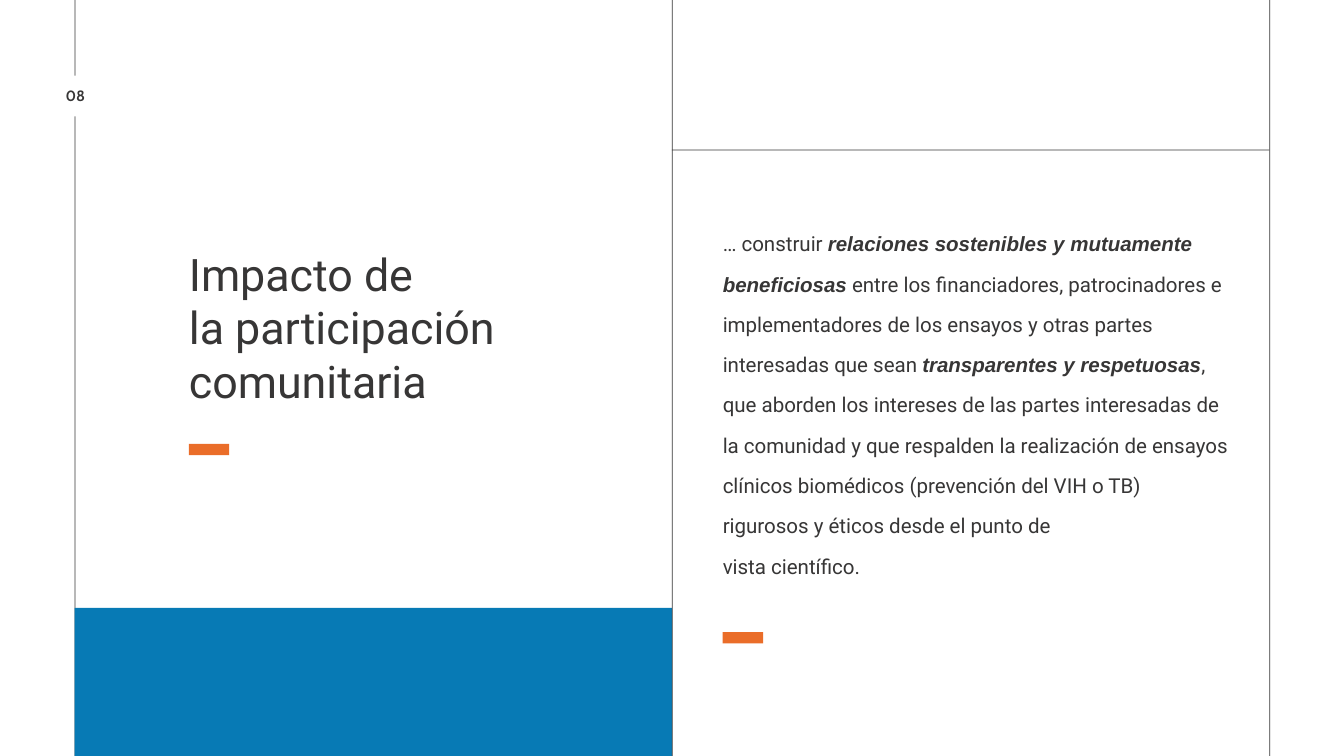
"""Build the slide on the impact of community participation."""
from dataclasses import dataclass

from pptx import Presentation
from pptx import util as u
from pptx.dml import color
from pptx.enum import shapes, text

WIDTH, HEIGHT = u.Inches(20), u.Inches(11.25)
COLUMN, ROW = WIDTH / 18, HEIGHT / 10


@dataclass(frozen=True)
class Theme:
    ink: str = "373636"
    paper: str = "FFFFFF"
    accent: str = "EA6D29"
    panel: str = "077AB5"
    font: str = "Roboto"
    strong_font: str = "Arial"
    number_font: str = "Cabin"
    number_size: float = 16
    title_size: float = 48
    body_size: float = 22


@dataclass(frozen=True)
class Area:
    column: float
    row: float
    columns: float
    rows: float

    def lengths(self) -> tuple[int, ...]:
        return (round(self.column * COLUMN), round(self.row * ROW),
                round(self.columns * COLUMN), round(self.rows * ROW))


@dataclass(frozen=True)
class Block:
    area: Area
    fill: str


@dataclass(frozen=True)
class Span:
    words: str
    font: str
    bold: bool = False
    italic: bool = False


@dataclass(frozen=True)
class TextBlock:
    area: Area
    paragraphs: list[list[Span]]
    size: float
    spacing: float
    align: text.PP_ALIGN = text.PP_ALIGN.LEFT


THEME = Theme()
LINE = 0.01


def plain(words: str) -> Span:
    return Span(words, THEME.font)


def strong(words: str) -> Span:
    return Span(words, THEME.strong_font, bold=True, italic=True)


def rule(column: float) -> Block:
    return Block(Area(column, -0.35, LINE, 10.68), THEME.ink)


def accent(column: float, row: float) -> Block:
    return Block(Area(column, row, 0.54, 0.15), THEME.accent)


BLOCKS = [
    rule(1),
    Block(Area(0.62, 1, 0.77, 0.54), THEME.paper),
    accent(2.53, 5.87),
    accent(9.68, 8.36),
    Block(Area(9, 1.98, 8, LINE), THEME.ink),
    Block(Area(1, 8.04, 8, 1.96), THEME.panel),
    rule(9),
    rule(17),
]

TEXTS = [
    TextBlock(Area(0.68, 1.16, 0.66, 0.22), [[Span("08", THEME.number_font, bold=True)]],
              THEME.number_size, 17.6, text.PP_ALIGN.CENTER),
    TextBlock(Area(2.53, 3.26, 4.96, 2.12),
              [[plain("Impacto de \nla participación comunitaria")]],
              THEME.title_size, 57.6),
    TextBlock(Area(9.68, 2.85, 6.79, 5.82), [
        [plain("… construir "),
         strong("relaciones sostenibles y mutuamente beneficiosas"),
         plain(" entre los financiadores, patrocinadores e implementadores de los "
               "ensayos y otras partes interesadas que sean "),
         strong("transparentes y respetuosas"),
         plain(", que aborden los intereses de las partes interesadas de \n"
               "la comunidad y que respalden la realización de ensayos clínicos "
               "biomédicos (prevención del VIH o TB) rigurosos y éticos desde el punto de")],
        [plain("vista científico.")],
    ], THEME.body_size, 43.2),
]


def draw_block(slide, block: Block) -> None:
    shape = slide.shapes.add_shape(shapes.MSO_SHAPE.RECTANGLE, *block.area.lengths())
    shape.shadow.inherit = False
    shape.fill.solid()
    shape.fill.fore_color.rgb = color.RGBColor.from_string(block.fill)
    shape.line.fill.background()


def write_span(paragraph, span: Span, size: float) -> None:
    for index, words in enumerate(span.words.split("\n")):
        if index:
            paragraph.add_line_break()
        run = paragraph.add_run()
        run.text = words
        run.font.name = span.font
        run.font.size = u.Pt(size)
        run.font.bold = span.bold
        run.font.italic = span.italic
        run.font.color.rgb = color.RGBColor.from_string(THEME.ink)


def draw_text(slide, block: TextBlock) -> None:
    frame = slide.shapes.add_textbox(*block.area.lengths()).text_frame
    frame.word_wrap = True
    frame.auto_size = text.MSO_AUTO_SIZE.SHAPE_TO_FIT_TEXT
    frame.margin_left = frame.margin_right = frame.margin_top = frame.margin_bottom = 0
    for index, spans in enumerate(block.paragraphs):
        paragraph = frame.add_paragraph() if index else frame.paragraphs[0]
        paragraph.alignment = block.align
        paragraph.line_spacing = u.Pt(block.spacing)
        for span in spans:
            write_span(paragraph, span, block.size)


def main() -> None:
    presentation = Presentation()
    presentation.slide_width, presentation.slide_height = WIDTH, HEIGHT
    slide = presentation.slides.add_slide(presentation.slide_layouts[6])
    for block in BLOCKS:
        draw_block(slide, block)
    for block in TEXTS:
        draw_text(slide, block)
    presentation.save("out.pptx")


if __name__ == "__main__":
    main()
